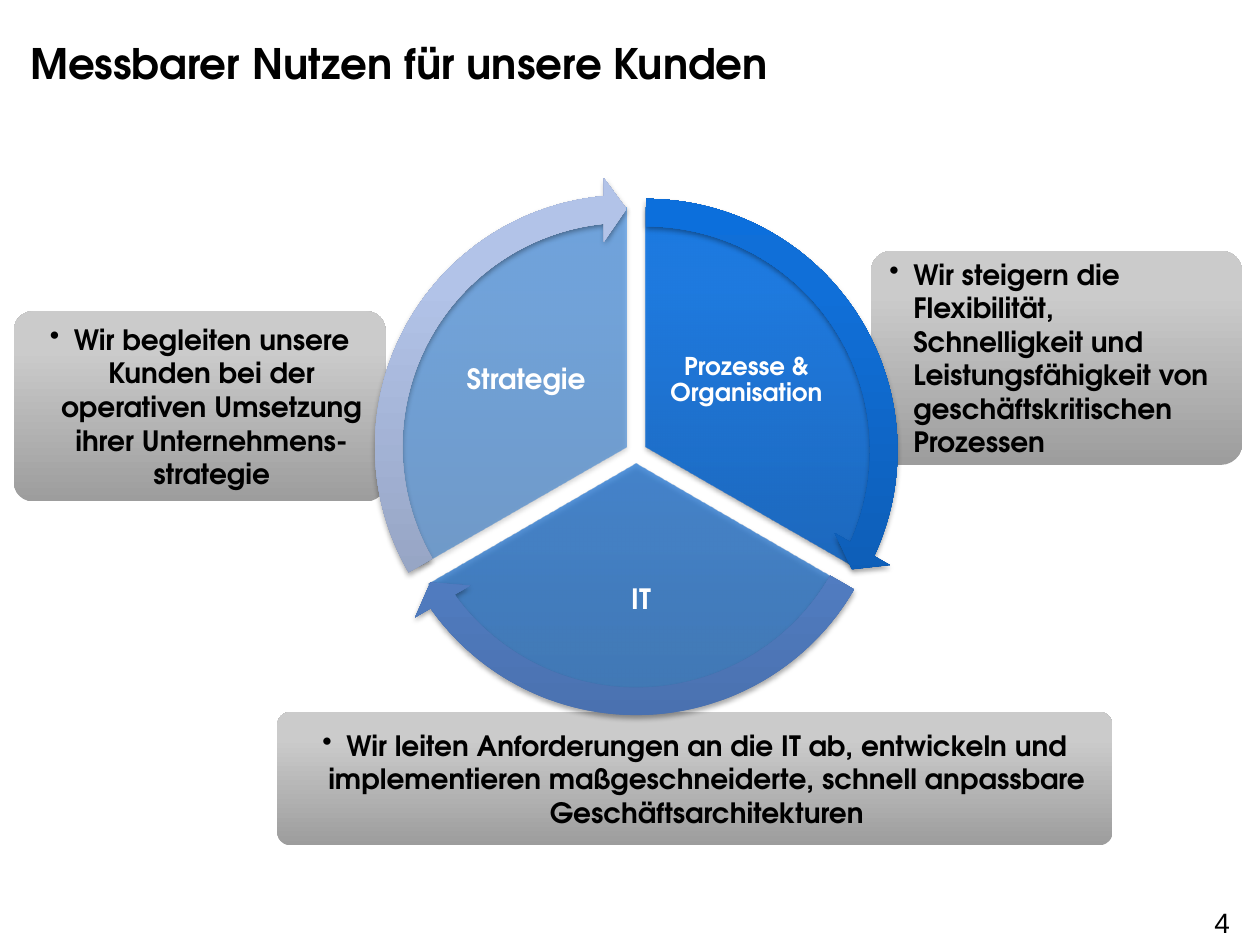
import math
from dataclasses import dataclass

import lxml.etree
import pptx
import pptx.dml.color
import pptx.enum.shapes
import pptx.enum.text
import pptx.oxml.ns
import pptx.util

COLUMNS, ROWS = 10, 7.5
FONT = "TeX Gyre Adventor"
GREY = ("9D9D9D", "CBCBCB", "CCCCCC")
BLUE = ("0D59AE", "1174E2", "0D74E7")
SHAPES = pptx.enum.shapes.MSO_SHAPE
ALIGN = pptx.enum.text.PP_ALIGN
MIDDLE = pptx.enum.text.MSO_ANCHOR.MIDDLE
qn = pptx.oxml.ns.qn


@dataclass
class Sector:
    label: str
    size: int
    opacity: int
    ring: tuple
    label_centre: tuple
    label_size: tuple
    drift: float = 0


SECTORS = [
    Sector("Prozesse & Organisation", 14, 90, ("0C55A6", "106FD8", "0C6FDC"),
           (0.23, -0.15), (0.36, 0.3), 0.03),
    Sector("IT", 16, 70, ("4970AE", "5F92E2", "5D92E5"),
           (0.01, 0.31), (0.54, 0.26)),
    Sector("Strategie", 16, 50, ("8996B3", "B2C3E8", "B2C3EA"),
           (-0.23, -0.15), (0.36, 0.3)),
]

CALLOUTS = [
    ((6.91, 1.99, 2.95, 1.7), ALIGN.LEFT,
     "Wir steigern die Flexibilität, Schnelligkeit und Leistungsfähigkeit von "
     "geschäftskritischen Prozessen"),
    ((2.2, 5.65, 6.63, 1.06), ALIGN.CENTER,
     "Wir leiten Anforderungen an die IT ab, entwickeln und implementieren "
     "maßgeschneiderte, schnell anpassbare Geschäftsarchitekturen"),
    ((0.11, 2.47, 2.95, 1.51), ALIGN.CENTER,
     "Wir begleiten unsere Kunden bei der operativen Umsetzung ihrer "
     "Unternehmens-strategie"),
]


def colour(value):
    return pptx.dml.color.RGBColor.from_string(value)


def place(box):
    return [pptx.util.Inches(length) for length in box]


def centred(x, y, width, height):
    return x - width / 2, y - height / 2, width, height


def element(parent, tag, **attributes):
    return lxml.etree.SubElement(
        parent, qn(tag), {name: str(value) for name, value in attributes.items()})


def write(shape, text, size, ink, align, font=FONT, bold=True, inset=None):
    frame = shape.text_frame
    frame.word_wrap = True
    if inset is not None:
        margin = pptx.util.Inches(inset)
        frame.margin_left = frame.margin_right = margin
        frame.margin_top = frame.margin_bottom = margin
    para = frame.paragraphs[0]
    para.text = text
    para.alignment = align
    para.font.name = font
    para.font.size = pptx.util.Pt(size)
    para.font.bold = bold
    para.font.color.rgb = colour(ink)
    return para


def add_gradient_shape(page, kind, box, adjustments, colours, opacity=100, shadow=False):
    shape = page.shapes.add_shape(kind, *place(box))
    for index, value in enumerate(adjustments):
        shape.adjustments[index] = value
    shape.line.fill.background()
    shape.shadow.inherit = False
    shape.fill.gradient()
    gradient = shape._element.spPr.find(qn("a:gradFill"))
    for child in list(gradient):
        gradient.remove(child)
    stops = element(gradient, "a:gsLst")
    for position, value in zip((0, 80000, 100000), colours):
        stop = element(stops, "a:gs", pos=position)
        ink = element(stop, "a:srgbClr", val=value)
        if opacity < 100:
            element(ink, "a:alpha", val=opacity * 1000)
    element(gradient, "a:lin", ang=270 * 60000, scaled=0)
    if shadow:
        effects = shape._element.spPr.find(qn("a:effectLst"))
        outer = element(effects, "a:outerShdw", blurRad=pptx.util.Pt(3.1),
                        dist=pptx.util.Pt(1.8), dir=90 * 60000, rotWithShape=0)
        element(element(outer, "a:srgbClr", val="000000"), "a:alpha", val=35000)
    return shape


def add_callout(page, box, align, text):
    shape = add_gradient_shape(page, SHAPES.ROUNDED_RECTANGLE, box, [0.1], GREY)
    shape.text_frame.vertical_anchor = MIDDLE
    para = shape.text_frame.paragraphs[0]
    properties = para._p.get_or_add_pPr()
    indent = pptx.util.Inches(0.19)
    properties.set("marL", str(indent))
    properties.set("indent", str(-indent))
    element(properties, "a:buChar", char="•")
    para.level = 1
    write(shape, text, 16, "000000", align)


def add_cycle(page, centre_x, centre_y, diameter):
    ring = diameter * 1.126
    gap = 0.09
    sweep = 360 / len(SECTORS)
    head = 5.46
    unit = 60000 / 100000
    parts = []
    for index, sector in enumerate(SECTORS):
        start = (270 + index * sweep) % 360
        end = (start + sweep) % 360
        bisector = math.radians(start + sweep / 2)
        x = centre_x + gap * math.cos(bisector)
        y = centre_y + gap * math.sin(bisector)
        parts.append((sector, start, end, x, y))

    for sector, start, end, x, y in parts:
        add_gradient_shape(page, SHAPES.PIE, centred(x, y, diameter, diameter),
                           [start * unit, end * unit], BLUE, sector.opacity, True)
        across, down = sector.label_centre
        width, height = (share * diameter for share in sector.label_size)
        box = centred(centre_x + across * diameter, centre_y + down * diameter,
                      width, height)
        label = page.shapes.add_textbox(*place(box))
        label.text_frame.vertical_anchor = MIDDLE
        para = write(label, sector.label, sector.size, "FFFFFF", ALIGN.CENTER, inset=0.02)
        para.line_spacing = 0.9

    for sector, start, end, x, y in parts:
        tip = (end - head) % 360
        add_gradient_shape(page, SHAPES.CIRCULAR_ARROW,
                           centred(x, y + sector.drift, ring, ring),
                           [0.051, head * unit, tip * unit, start * unit, 0.059],
                           sector.ring, shadow=True)


def add_title(page, box, text):
    title = page.shapes.title
    title.left, title.top, title.width, title.height = place(box)
    title.text_frame.vertical_anchor = MIDDLE
    write(title, text, 24, "000000", ALIGN.LEFT, inset=0)


def add_page_number(page, box, number):
    shape = page.shapes.add_textbox(*place(box))
    write(shape, number, 16, "000000", ALIGN.LEFT, font="Arial", bold=False)
    shape.text_frame.word_wrap = False


def main():
    deck = pptx.Presentation()
    deck.slide_width = pptx.util.Inches(COLUMNS)
    deck.slide_height = pptx.util.Inches(ROWS)
    page = deck.slides.add_slide(deck.slide_layouts.get_by_name("Title Only"))
    add_title(page, (0.24, 0.08, 8.23, 0.83), "Messbarer Nutzen für unsere Kunden")
    for box, align, text in CALLOUTS:
        add_callout(page, box, align, text)
    add_cycle(page, 5.05, 3.59, 3.8)
    add_page_number(page, (9.54, 7.14, 0.27, 0.16), "4")
    deck.save("out.pptx")


if __name__ == "__main__":
    main()
